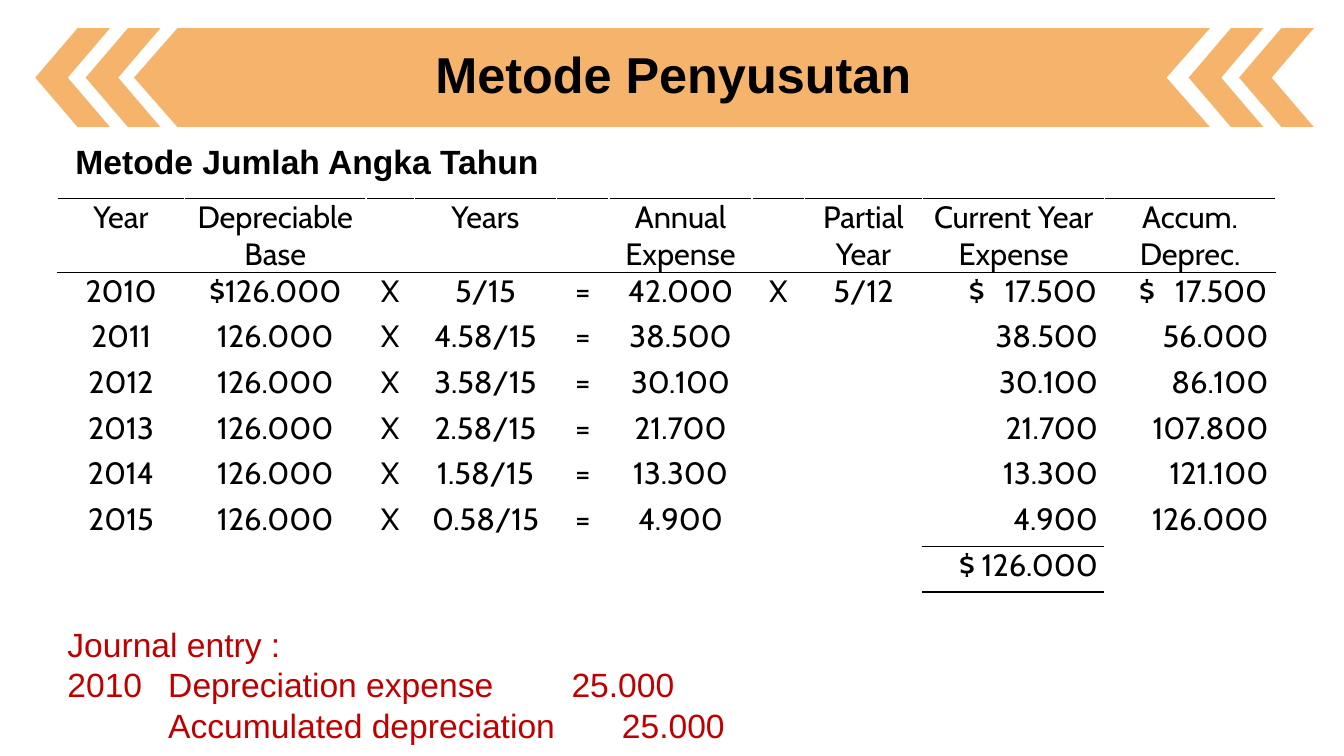
from dataclasses import dataclass

from lxml.etree import SubElement
from pptx import Presentation
from pptx.dml.color import RGBColor
from pptx.enum.shapes import MSO_SHAPE
from pptx.enum.text import MSO_ANCHOR, PP_ALIGN
from pptx.oxml.ns import qn
from pptx.util import Inches, Pt


@dataclass(frozen=True)
class Theme:
    band: str = "F3932D"
    ink: str = "000000"
    entry: str = "C00000"
    sans: str = "Arial"
    grid: str = "Cabin"
    title: int = 36
    body: int = 24
    cell: int = 22
    alpha: int = 70000
    rule: int = 1


COLS, ROWS = 133.3, 75
SUM = 8
WIDTHS = [12.6, 18, 4.8, 14.1, 5.2, 14.2, 5.2, 11.7, 18.1, 16.9]
HEADS = ["Year", "Depreciable Base", "", "Years", "", "Annual Expense", "",
         "Partial Year", "Current Year Expense", "Accum. Deprec."]
YEARS = [
    ("2010", "$126.000", "5/15", "42.000", "X", "5/12", "$\t17.500", "$\t17.500"),
    ("2011", "126.000", "4.58/15", "38.500", "", "", "38.500", "56.000"),
    ("2012", "126.000", "3.58/15", "30.100", "", "", "30.100", "86.100"),
    ("2013", "126.000", "2.58/15", "21.700", "", "", "21.700", "107.800"),
    ("2014", "126.000", "1.58/15", "13.300", "", "", "13.300", "121.100"),
    ("2015", "126.000", "0.58/15", "4.900", "", "", "4.900", "126.000"),
]


class Page:
    def __init__(self, deck, theme):
        self.theme = theme
        self.wide, self.high = deck.slide_width, deck.slide_height
        self.shapes = deck.slides.add_slide(deck.slide_layouts[6]).shapes

    def x(self, cols):
        return round(self.wide * cols / COLS)

    def y(self, rows):
        return round(self.high * rows / ROWS)

    def box(self, left, top, wide, high):
        return self.x(left), self.y(top), self.x(wide), self.y(high)

    def paint(self, shape):
        shape.shadow.inherit = False
        shape.line.fill.background()
        shape.fill.solid()
        shape.fill.fore_color.rgb = RGBColor.from_string(self.theme.band)
        tint = shape.fill._xPr.find(qn("a:solidFill"))[0]
        SubElement(tint, qn("a:alpha"), val=str(self.theme.alpha))

    def arrow(self, *place):
        shape = self.shapes.add_shape(MSO_SHAPE.CHEVRON, *self.box(*place))
        shape.adjustments[0] = 0.565
        shape.rotation = 180
        self.paint(shape)

    def outline(self, points):
        spots = [(self.x(col), self.y(row)) for col, row in points]
        form = self.shapes.build_freeform(*spots[0])
        form.add_line_segments(spots[1:])
        self.paint(form.convert_to_shape())

    def style(self, para, size, face, color, bold=False):
        for run in para.runs:
            run.font.size = Pt(size)
            run.font.name = face
            run.font.bold = bold
            run.font.color.rgb = RGBColor.from_string(color)

    def text(self, words, place, size, color, bold=False):
        frame = self.shapes.add_textbox(*self.box(*place)).text_frame
        frame.word_wrap = True
        frame.text = words
        for para in frame.paragraphs:
            self.style(para, size, self.theme.sans, color, bold)
        return frame

    def title(self, words, place):
        frame = self.text(words, place, self.theme.title, self.theme.ink, True)
        frame.vertical_anchor = MSO_ANCHOR.MIDDLE
        para = frame.paragraphs[0]
        para.alignment = PP_ALIGN.CENTER
        para.line_spacing = 0.9
        para.space_before = Pt(10)

    def cell(self, cell, words, align, wide, sides):
        cell.margin_left = cell.margin_right = self.x(0.7)
        cell.margin_top = cell.margin_bottom = 0
        for side in sides:
            line = SubElement(cell._tc.get_or_add_tcPr(), qn("a:ln" + side),
                              w=str(Pt(self.theme.rule)))
            fill = SubElement(line, qn("a:solidFill"))
            SubElement(fill, qn("a:srgbClr"), val=self.theme.ink)
        cell.fill.background()
        if not words:
            return
        cell.text_frame.text = words
        para = cell.text_frame.paragraphs[0]
        para.alignment = align
        if "\t" in words:
            para.alignment = PP_ALIGN.LEFT
            cell.margin_left = self.x(wide - 13.5)
            tabs = SubElement(para._p.get_or_add_pPr(), qn("a:tabLst"))
            SubElement(tabs, qn("a:tab"), pos=str(self.x(12.7)), algn="r")
        self.style(para, self.theme.cell, self.theme.grid, self.theme.ink)

    def table(self, rows, widths, left, top, step):
        place = self.box(left, top, sum(widths), step * len(rows))
        table = self.shapes.add_table(len(rows), len(widths), *place).table
        table.first_row = table.horz_banding = False
        last = len(rows) - 1
        for col, wide in enumerate(widths):
            table.columns[col].width = self.x(wide)
            for row, words in enumerate(rows):
                above = row < 2 or (row == last and col == SUM)
                below = row == 0 or (row >= last - 1 and col == SUM)
                sides = "T" * above + "B" * below
                right = row > 0 and col >= SUM
                align = PP_ALIGN.RIGHT if right else PP_ALIGN.CENTER
                self.cell(table.cell(row, col), words[col], align, wide, sides)


def main():
    deck = Presentation()
    deck.slide_width, deck.slide_height = Inches(13.33), Inches(7.5)
    theme = Theme()
    page = Page(deck, theme)

    for left in (3.5, 8.5, 117.9, 122.9):
        page.arrow(left, 2.8, 7.4, 9.8)
    page.outline([(17.6, 2.8), (120, 2.8), (115.7, 7.7),
                  (120, 12.6), (17.6, 12.6), (13.3, 7.7)])
    page.title("Metode Penyusutan", (3.5, 3.7, 126.6, 7.9))
    page.text("Metode Jumlah Angka Tahun", (6.5, 13.5, 118.9, 5),
              theme.body, theme.ink, True)
    page.text("Journal entry :\n"
              "2010\tDepreciation expense\t\t25.000\n"
              "\t\tAccumulated depreciation\t\t25.000",
              (5.7, 61.4, 93.8, 13.1), theme.body, theme.entry)

    rows = [HEADS]
    for year, base, share, cost, *rest in YEARS:
        rows.append([year, base, "X", share, "=", cost, *rest])
    total = [""] * len(WIDTHS)
    total[SUM] = "$ 126.000"
    page.table(rows + [total], WIDTHS, 5.7, 19.7, 4.53)
    deck.save("out.pptx")


if __name__ == "__main__":
    main()
